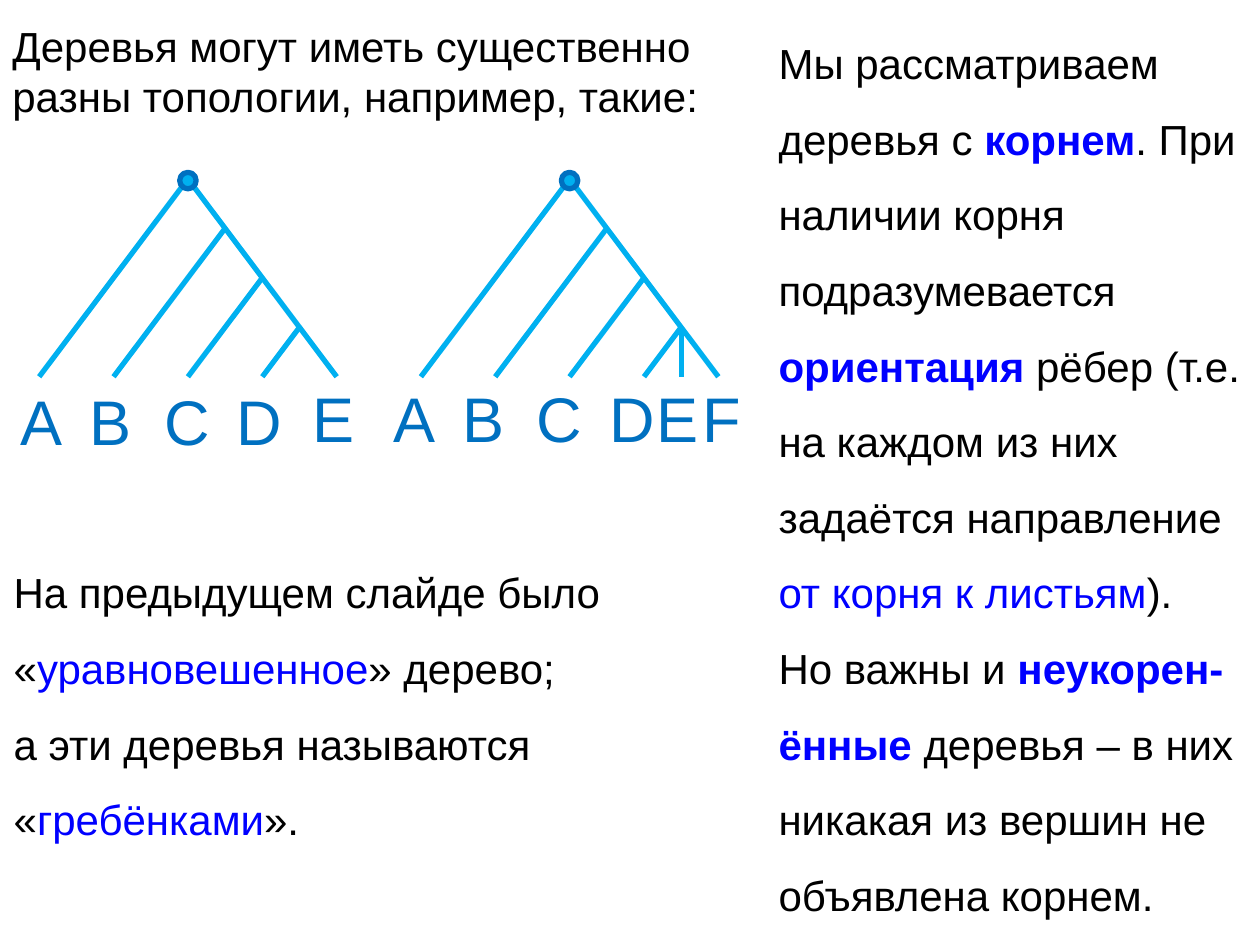
from pptx import Presentation
from pptx.dml.color import RGBColor
from pptx.enum.shapes import MSO_CONNECTOR as Link, MSO_SHAPE as Form
from pptx.enum.text import MSO_AUTO_SIZE as Fit
from pptx.oxml.ns import qn
from pptx.util import Pt
from lxml.etree import SubElement

BLACK = RGBColor(0x00, 0x00, 0x00)
BLUE = RGBColor(0x00, 0x00, 0xFF)
BRANCH = RGBColor(0x00, 0xB0, 0xF0)
NODE = RGBColor(0x00, 0x70, 0xC0)

PLAIN = (BLACK, False)
TERM = (BLUE, False)
KEY = (BLUE, True)


def add_text(page, paragraphs, left, top, width, height, size=24, spacing=None):
    box = page.shapes.add_textbox(Pt(left), Pt(top), Pt(width), Pt(height))
    frame = box.text_frame
    frame.word_wrap = True
    frame.auto_size = Fit.SHAPE_TO_FIT_TEXT
    for index, spans in enumerate(paragraphs):
        para = frame.add_paragraph() if index else frame.paragraphs[0]
        if spacing:
            para.line_spacing = spacing
        for text, (color, bold) in spans:
            span = para.add_run()
            span.text = text
            span.font.name = "Arial"
            span.font.size = Pt(size)
            span.font.bold = bold
            span.font.color.rgb = color


def add_branch(page, start, end):
    branch = page.shapes.add_connector(Link.STRAIGHT, *map(Pt, start + end))
    branch.line.color.rgb = BRANCH
    branch.line.width = Pt(3)
    SubElement(branch.element.spPr, qn("a:effectLst"))


def add_comb_tree(page, left, top, width, height, labels, label_top, extra_leaf=False):
    right, bottom = left + width, top + height
    apex = left + width / 2
    add_branch(page, (right, bottom), (apex, top))
    for step in range(4):
        joint = (apex + step * width / 8, top + step * height / 4)
        add_branch(page, (left + step * width / 4, bottom), joint)
    if extra_leaf:
        add_branch(page, (joint[0], bottom), joint)

    diameter = 9.4
    root = page.shapes.add_shape(
        Form.OVAL, Pt(apex - diameter / 2), Pt(top + 1 - diameter / 2),
        Pt(diameter), Pt(diameter))
    root.shadow.inherit = False
    root.fill.solid()
    root.fill.fore_color.rgb = BRANCH
    root.line.color.rgb = NODE
    root.line.width = Pt(3)

    for letter, offset in labels:
        add_text(page, [[(letter, (NODE, False))]], left + offset, label_top,
                 41.8, 51, size=36)


def add_heading(page, left, top, width, height):
    lines = ["Деревья могут иметь существенно", "разны топологии, например, такие:"]
    add_text(page, [[(line, PLAIN)] for line in lines], left, top, width, height)


def add_comb_note(page, left, top, width, height):
    add_text(page, [
        [("На предыдущем слайде было «", PLAIN), ("уравновешенное", TERM),
         ("» дерево;", PLAIN)],
        [("а эти деревья называются «", PLAIN), ("гребёнками", TERM), ("».", PLAIN)],
    ], left, top, width, height, spacing=1.5)


def add_root_note(page, left, top, width, height):
    add_text(page, [
        [("Мы рассматриваем деревья с ", PLAIN), ("корнем", KEY),
         (". При наличии корня подразумевается ", PLAIN), ("ориентация ", KEY),
         ("рёбер (т.е. на каждом из них задаётся направление ", PLAIN),
         ("от корня к листьям", TERM), (").", PLAIN)],
        [("Но важны и ", PLAIN), ("неукорен-ённые", KEY),
         (" деревья – в них никакая из вершин не объявлена корнем.", PLAIN)],
    ], left, top, width, height, spacing=1.5)


def main():
    deck = Presentation()
    deck.slide_width, deck.slide_height = Pt(720), Pt(540)
    page = deck.slides.add_slide(deck.slide_layouts[6])

    add_root_note(page, 437.8, 3.6, 280.8, 530.6)
    add_comb_note(page, 0.7, 306, 363.6, 181.4)
    add_comb_tree(page, 22.4, 102.2, 170, 113.1,
                  zip("ABCD", (-18, 21.6, 64.8, 105.8)), 215.3)
    add_text(page, [[("E", (NODE, False))]], 171.4, 213.1, 41.8, 51, size=36)
    add_comb_tree(page, 240.5, 102.2, 170, 113.1,
                  zip("ABCDEF", (-23, 16.6, 59, 100.8, 127.4, 154)), 213.1,
                  extra_leaf=True)
    add_heading(page, 0, 7.9, 426.2, 65.5)

    deck.save("out.pptx")


if __name__ == "__main__":
    main()
